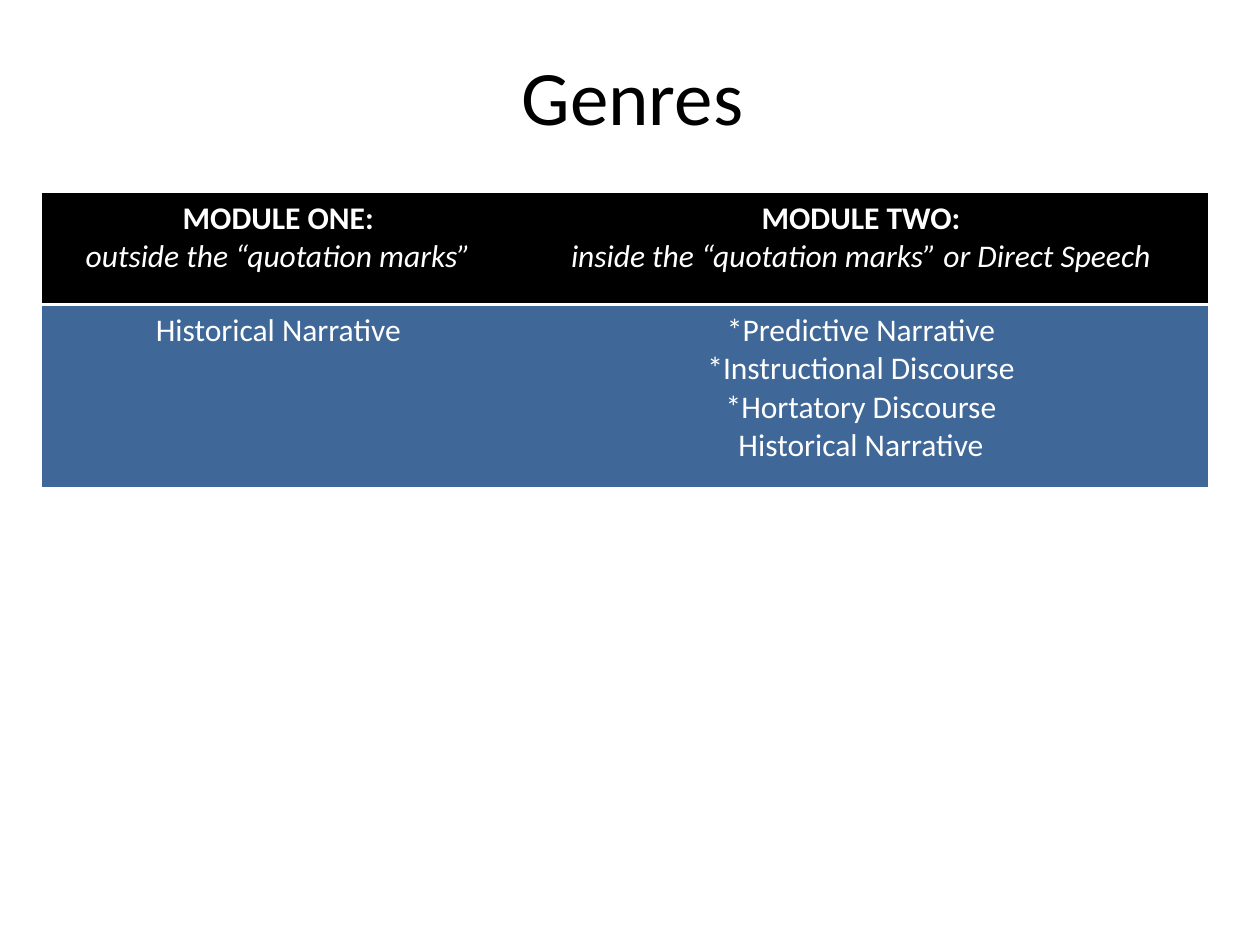
from dataclasses import dataclass

from lxml.etree import SubElement
from pptx import Presentation
from pptx.dml.color import RGBColor
from pptx.enum.text import MSO_ANCHOR, PP_ALIGN
from pptx.oxml.ns import qn
from pptx.util import Pt


@dataclass(frozen=True)
class Theme:
    font: str = "Calibri"
    title_size: int = 44
    body_size: int = 18
    black: str = "000000"
    white: str = "FFFFFF"
    blue: str = "3F6797"
    rule_width: int = 2


THEME = Theme()
COLUMN_WIDTHS = (270, 396)
ROW_HEIGHTS = (64, 104)
HEADERS = (
    ("MODULE ONE:", "outside the “quotation marks”"),
    ("MODULE TWO:", "inside the “quotation marks” or Direct Speech"),
)
GENRES = (
    ("Historical Narrative",),
    (
        "*Predictive Narrative",
        "*Instructional Discourse",
        "*Hortatory Discourse",
        "Historical Narrative",
    ),
)


def format_paragraph(paragraph, size, color, bold=False, italic=False):
    paragraph.alignment = PP_ALIGN.CENTER
    for run in paragraph.runs:
        font = run.font
        font.name, font.size = THEME.font, Pt(size)
        font.bold, font.italic = bold, italic
        font.color.rgb = RGBColor.from_string(color)


def set_borders(cell, ruled_side):
    """Draw a white rule on one side of the cell and clear the other sides."""
    properties = cell._tc.get_or_add_tcPr()
    for side in ("lnL", "lnR", "lnT", "lnB"):
        line = SubElement(properties, qn(f"a:{side}"))
        if side == ruled_side:
            line.set("w", str(Pt(THEME.rule_width)))
            fill = SubElement(line, qn("a:solidFill"))
            SubElement(fill, qn("a:srgbClr")).set("val", THEME.white)
        else:
            line.set("w", "0")
            SubElement(line, qn("a:noFill"))


def fill_cell(cell, lines, color, is_header):
    set_borders(cell, "lnB" if is_header else "lnT")
    cell.fill.solid()
    cell.fill.fore_color.rgb = RGBColor.from_string(color)
    cell.text_frame.text = "\n".join(lines)
    for index, paragraph in enumerate(cell.text_frame.paragraphs):
        format_paragraph(
            paragraph, THEME.body_size, THEME.white,
            bold=is_header and index == 0,
            italic=is_header and index > 0,
        )


def add_title(slide, text, left, top, width, height):
    text_frame = slide.shapes.add_textbox(
        Pt(left), Pt(top), Pt(width), Pt(height)).text_frame
    text_frame.word_wrap = True
    text_frame.vertical_anchor = MSO_ANCHOR.MIDDLE
    text_frame.text = text
    format_paragraph(text_frame.paragraphs[0], THEME.title_size, THEME.black)


def add_genre_table(slide, left, top):
    table = slide.shapes.add_table(
        len(ROW_HEIGHTS), len(COLUMN_WIDTHS), Pt(left), Pt(top),
        Pt(sum(COLUMN_WIDTHS)), Pt(sum(ROW_HEIGHTS))).table
    table.horz_banding = False
    for column, width in zip(table.columns, COLUMN_WIDTHS):
        column.width = Pt(width)
    for row, height in zip(table.rows, ROW_HEIGHTS):
        row.height = Pt(height)
    row_styles = ((HEADERS, THEME.black, True), (GENRES, THEME.blue, False))
    for row, (texts, color, is_header) in zip(table.rows, row_styles):
        for cell, lines in zip(row.cells, texts):
            fill_cell(cell, lines, color, is_header)


def main():
    presentation = Presentation()
    presentation.slide_width, presentation.slide_height = Pt(720), Pt(540)
    slide = presentation.slides.add_slide(presentation.slide_layouts[6])
    add_title(slide, "Genres", left=37.5, top=24, width=648, height=60)
    add_genre_table(slide, left=24, top=110.25)
    presentation.save("out.pptx")


if __name__ == "__main__":
    main()
